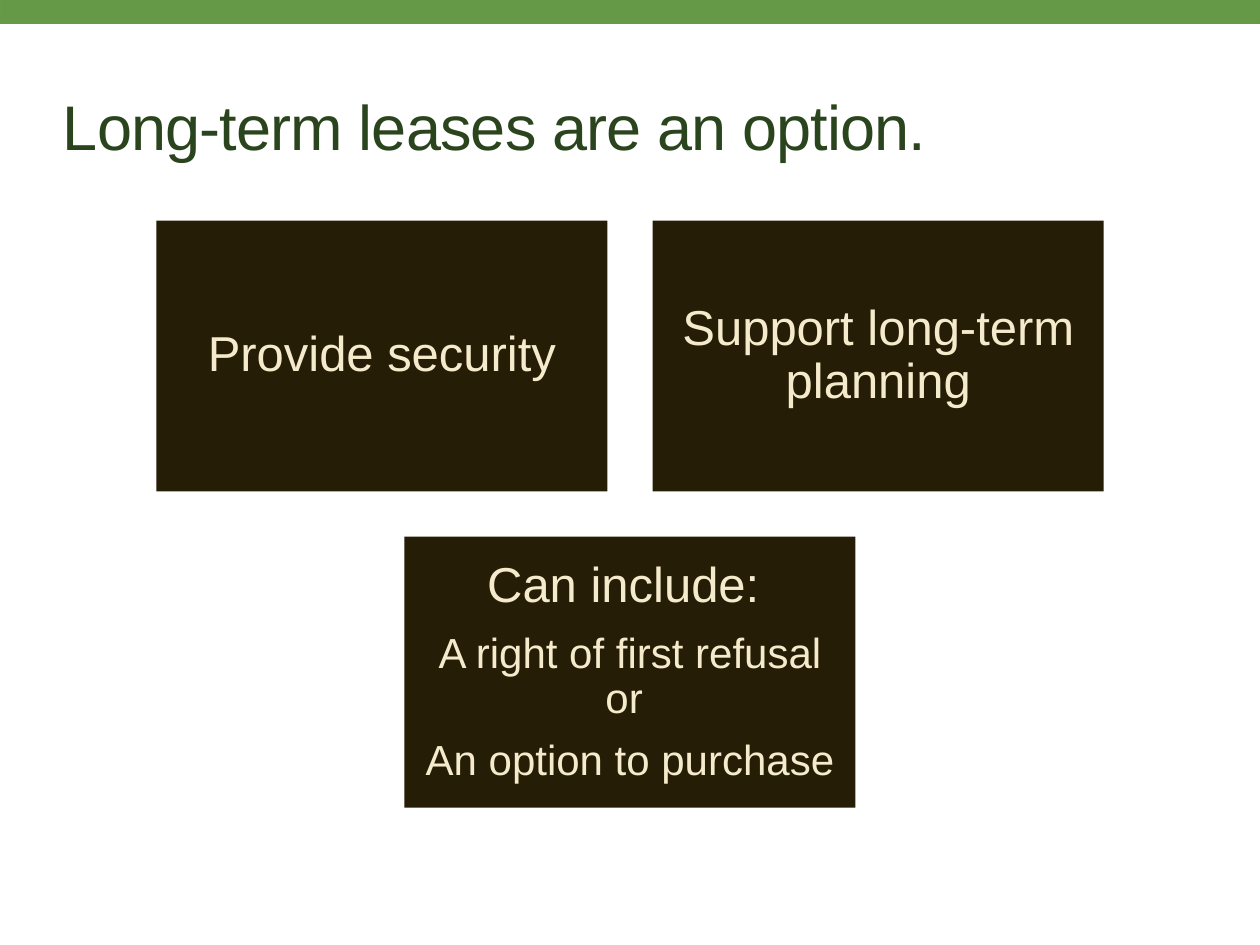
import pptx
import pptx.dml.color
import pptx.enum.shapes
import pptx.enum.text
import pptx.util

Inches, Pt = pptx.util.Inches, pptx.util.Pt
RGB = pptx.dml.color.RGBColor.from_string
RECT = pptx.enum.shapes.MSO_SHAPE.RECTANGLE
ALIGN = pptx.enum.text.PP_ALIGN
MIDDLE = pptx.enum.text.MSO_ANCHOR.MIDDLE
SIDES = ("left", "right", "top", "bottom")

COLORS = {
    "band": "669947",
    "edge": "679A47",
    "title": "2A451D",
    "card": "261D07",
    "cream": "F5EACC",
}


def block(x, y, w, h, fill):
    shape = slide.shapes.add_shape(RECT, Inches(x), Inches(y), Inches(w), Inches(h))
    shape.shadow.inherit = False
    shape.fill.solid()
    shape.fill.fore_color.rgb = RGB(COLORS[fill])
    shape.line.fill.background()
    return shape


def write(shape, lines, color, align, inset):
    """Fill a shape with (text, size, space after) paragraphs."""
    frame = shape.text_frame
    frame.word_wrap = True
    frame.vertical_anchor = MIDDLE
    for side in SIDES:
        setattr(frame, "margin_" + side, Inches(inset))
    for i, (text, size, after) in enumerate(lines):
        para = frame.paragraphs[0] if i == 0 else frame.add_paragraph()
        form = {"alignment": align, "line_spacing": 0.9, "space_after": Pt(after)}
        for name, value in form.items():
            setattr(para, name, value)
        run = para.add_run()
        run.text = text
        run.font.name = "Arial"
        run.font.size = Pt(size)
        run.font.color.rgb = RGB(COLORS[color])


deck = pptx.Presentation()
deck.slide_width, deck.slide_height = Inches(10), Inches(7.5)
slide = deck.slides.add_slide(deck.slide_layouts[6])

band = block(0, -0.02, 10.01, 0.2, "band")
band.line.color.rgb = RGB(COLORS["edge"])
band.line.width = Pt(2)

title = slide.shapes.add_textbox(Inches(0.5), Inches(0.52), Inches(9), Inches(1.03))
write(title, [("Long-term leases are an option.", 36, 0)], "title", ALIGN.LEFT, 0)
for run in title.text_frame.paragraphs[0].runs:
    run._r.get_or_add_rPr().set("spc", "-50")

# Each row of cards is centred on the slide, with one gap both ways.
rows = [
    [
        [("Provide security", 28, 10)],
        [("Support long-term planning", 28, 10)],
    ],
    [
        [
            ("Can include: ", 28, 11),
            ("A right of first refusal or ", 24, 9.5),
            ("An option to purchase", 24, 9.5),
        ],
    ],
]
wide, high, gap, top = 3.58, 2.15, 0.36, 1.75
for r, row in enumerate(rows):
    left = (10 - len(row) * wide - (len(row) - 1) * gap) / 2
    for c, lines in enumerate(row):
        card = block(left + c * (wide + gap), top + r * (high + gap), wide, high, "card")
        write(card, lines, "cream", ALIGN.CENTER, 0.12)

deck.save("out.pptx")
